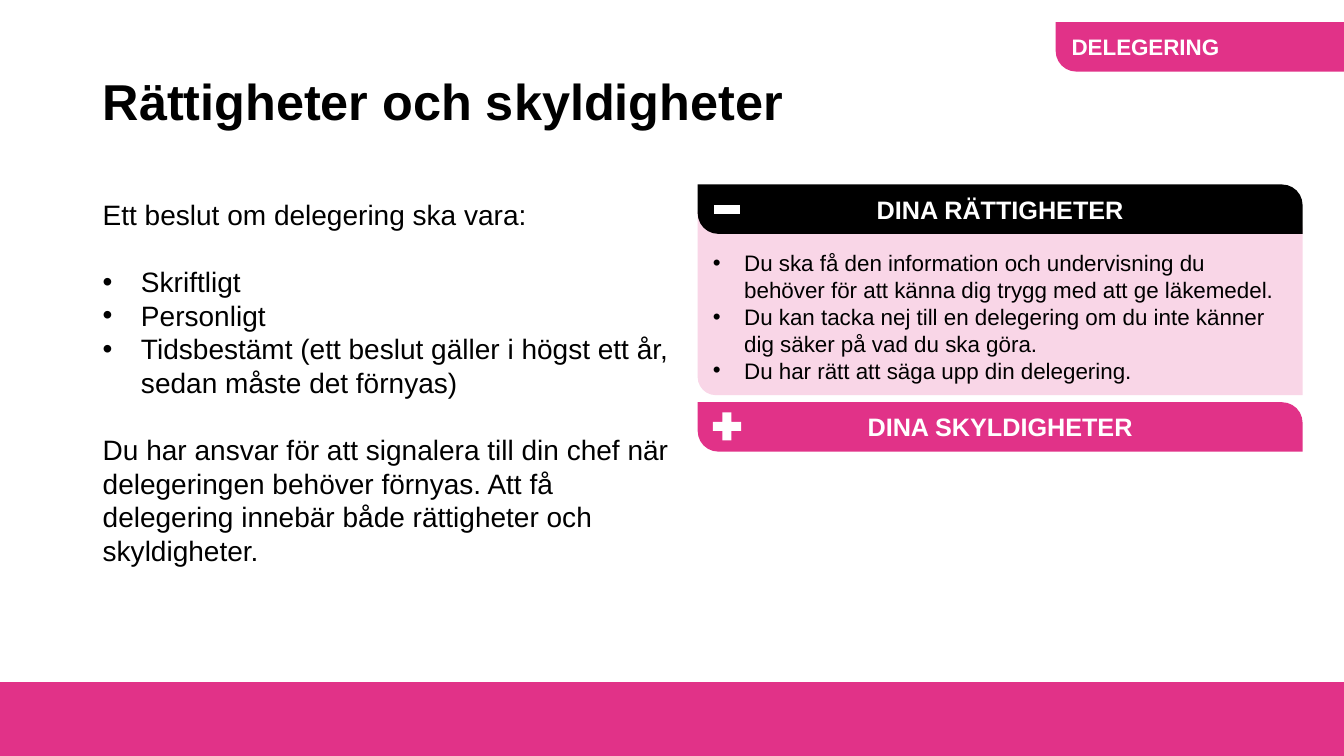
from dataclasses import dataclass

from lxml import etree
from pptx import Presentation
from pptx.dml.color import RGBColor
from pptx.enum.shapes import MSO_SHAPE
from pptx.enum.text import MSO_ANCHOR, PP_ALIGN
from pptx.oxml.ns import qn
from pptx.util import Inches, Pt

RECTANGLE = MSO_SHAPE.RECTANGLE
DIAGONAL = MSO_SHAPE.ROUND_2_DIAG_RECTANGLE
PLUS, MINUS = MSO_SHAPE.MATH_PLUS, MSO_SHAPE.MATH_MINUS
TOP, MIDDLE = MSO_ANCHOR.TOP, MSO_ANCHOR.MIDDLE
LEFT, CENTER = PP_ALIGN.LEFT, PP_ALIGN.CENTER

PINK, PALE_PINK, BLACK, WHITE = "E13288", "F9D6E7", "000000", "FFFFFF"
FONT = "Arial"
SLIDE_WIDTH, SLIDE_HEIGHT = 13.33, 7.5
FOOTER_HEIGHT = 0.73
BAND_HEIGHT, BAND_ROUNDING = 0.49, 0.417
PANEL_LEFT, PANEL_WIDTH = 6.92, 6


@dataclass
class Box:
    left: float
    top: float
    width: float
    height: float

    def lengths(self) -> list:
        return [Inches(n) for n in (self.left, self.top, self.width, self.height)]


@dataclass
class Line:
    text: str
    indent: float = 0  # hanging indent of a bullet, 0 for plain text
    space_before: float = 0


@dataclass
class Style:
    size: float
    color: str = BLACK
    bold: bool = False
    align: int = LEFT
    anchor: int = TOP
    top_inset: float = 0.05
    line_spacing: float = 1.0


@dataclass
class Header:
    title: str
    top: float
    fill: str
    symbol: int
    symbol_box: Box


TITLE_STYLE = Style(36, bold=True, line_spacing=0.9)
BODY_STYLE = Style(20)
RIGHTS_STYLE = Style(16, top_inset=0.32)
TAB_STYLE = Style(16, WHITE, bold=True, anchor=MIDDLE)
HEADER_STYLE = Style(18, WHITE, bold=True, align=CENTER, anchor=MIDDLE)

BODY = [
    Line("Ett beslut om delegering ska vara:"),
    Line("Skriftligt", 0.38, 24),
    Line("Personligt", 0.38),
    Line("Tidsbestämt (ett beslut gäller i högst ett år, sedan måste det förnyas)", 0.38),
    Line("Du har ansvar för att signalera till din chef när delegeringen behöver "
         "förnyas. Att få delegering innebär både rättigheter och skyldigheter.",
         space_before=24),
]
RIGHTS = [
    Line("Du ska få den information och undervisning du behöver för att känna dig "
         "trygg med att ge läkemedel.", 0.31),
    Line("Du kan tacka nej till en delegering om du inte känner dig säker på vad du "
         "ska göra.", 0.31),
    Line("Du har rätt att säga upp din delegering.", 0.31),
]
HEADERS = [
    Header("DINA SKYLDIGHETER", 3.99, PINK, PLUS, Box(7.02, 4.04, 0.38, 0.38)),
    Header("DINA RÄTTIGHETER", 1.83, BLACK, MINUS, Box(7.03, 1.9, 0.36, 0.36)),
]


def color(value: str) -> RGBColor:
    return RGBColor.from_string(value)


def set_attributes(target, values: dict) -> None:
    for name, value in values.items():
        setattr(target, name, value)


def add_bullet(paragraph, indent: float) -> None:
    properties = paragraph._p.get_or_add_pPr()
    properties.set("marL", str(Inches(indent)))
    properties.set("indent", str(-Inches(indent)))
    etree.SubElement(properties, qn("a:buFont")).set("typeface", FONT)
    etree.SubElement(properties, qn("a:buChar")).set("char", "•")


def write(shape, lines: list[Line], style: Style) -> None:
    frame = shape.text_frame
    set_attributes(frame, {"word_wrap": True, "vertical_anchor": style.anchor,
                           "margin_top": Inches(style.top_inset)})
    for number, line in enumerate(lines):
        paragraph = frame.add_paragraph() if number else frame.paragraphs[0]
        if line.indent:
            add_bullet(paragraph, line.indent)
        paragraph.text = line.text
        set_attributes(paragraph, {"alignment": style.align,
                                   "line_spacing": style.line_spacing})
        if line.space_before:
            paragraph.space_before = Pt(line.space_before)
        font = paragraph.runs[0].font
        set_attributes(font, {"name": FONT, "size": Pt(style.size), "bold": style.bold})
        font.color.rgb = color(style.color)


def add_text(shapes, box: Box, lines: list[Line], style: Style) -> None:
    write(shapes.add_textbox(*box.lengths()), lines, style)


def add_filled(shapes, kind: int, box: Box, fill: str):
    shape = shapes.add_shape(kind, *box.lengths())
    shape.shadow.inherit = False
    shape.fill.solid()
    shape.fill.fore_color.rgb = color(fill)
    shape.line.fill.background()
    return shape


def add_panel(shapes, box: Box, fill: str, rounding: float,
              lines: list[Line], style: Style) -> None:
    """Draw a text panel rounded at its top right and bottom left corners."""
    panel = add_filled(shapes, DIAGONAL, box, fill)
    panel.adjustments[0] = 0
    panel.adjustments[1] = rounding
    write(panel, lines, style)


def add_header(shapes, header: Header) -> None:
    group = shapes.add_group_shape()
    band = Box(PANEL_LEFT, header.top, PANEL_WIDTH, BAND_HEIGHT)
    add_panel(group.shapes, band, header.fill, BAND_ROUNDING,
              [Line(header.title)], HEADER_STYLE)
    add_filled(group.shapes, header.symbol, header.symbol_box, WHITE)


def main() -> None:
    presentation = Presentation()
    set_attributes(presentation, {"slide_width": Inches(SLIDE_WIDTH),
                                  "slide_height": Inches(SLIDE_HEIGHT)})
    shapes = presentation.slides.add_slide(presentation.slide_layouts[6]).shapes

    footer = Box(0, SLIDE_HEIGHT - FOOTER_HEIGHT, SLIDE_WIDTH, FOOTER_HEIGHT)
    footer_bar = add_filled(shapes, RECTANGLE, footer, PINK)
    footer_bar.line.color.rgb = color(PINK)
    footer_bar.line.width = Pt(1)

    add_panel(shapes, Box(PANEL_LEFT, 2.1, PANEL_WIDTH, 1.82), PALE_PINK, 0.099,
              RIGHTS, RIGHTS_STYLE)
    add_text(shapes, Box(0.92, 0.71, 11.5, 1.1),
             [Line("Rättigheter och skyldigheter")], TITLE_STYLE)
    add_text(shapes, Box(0.92, 1.91, 5.91, 3.8), BODY, BODY_STYLE)
    add_panel(shapes, Box(10.47, 0.22, 3.62, BAND_HEIGHT), PINK, BAND_ROUNDING,
              [Line("DELEGERING")], TAB_STYLE)
    for header in HEADERS:
        add_header(shapes, header)

    presentation.save("out.pptx")


if __name__ == "__main__":
    main()
